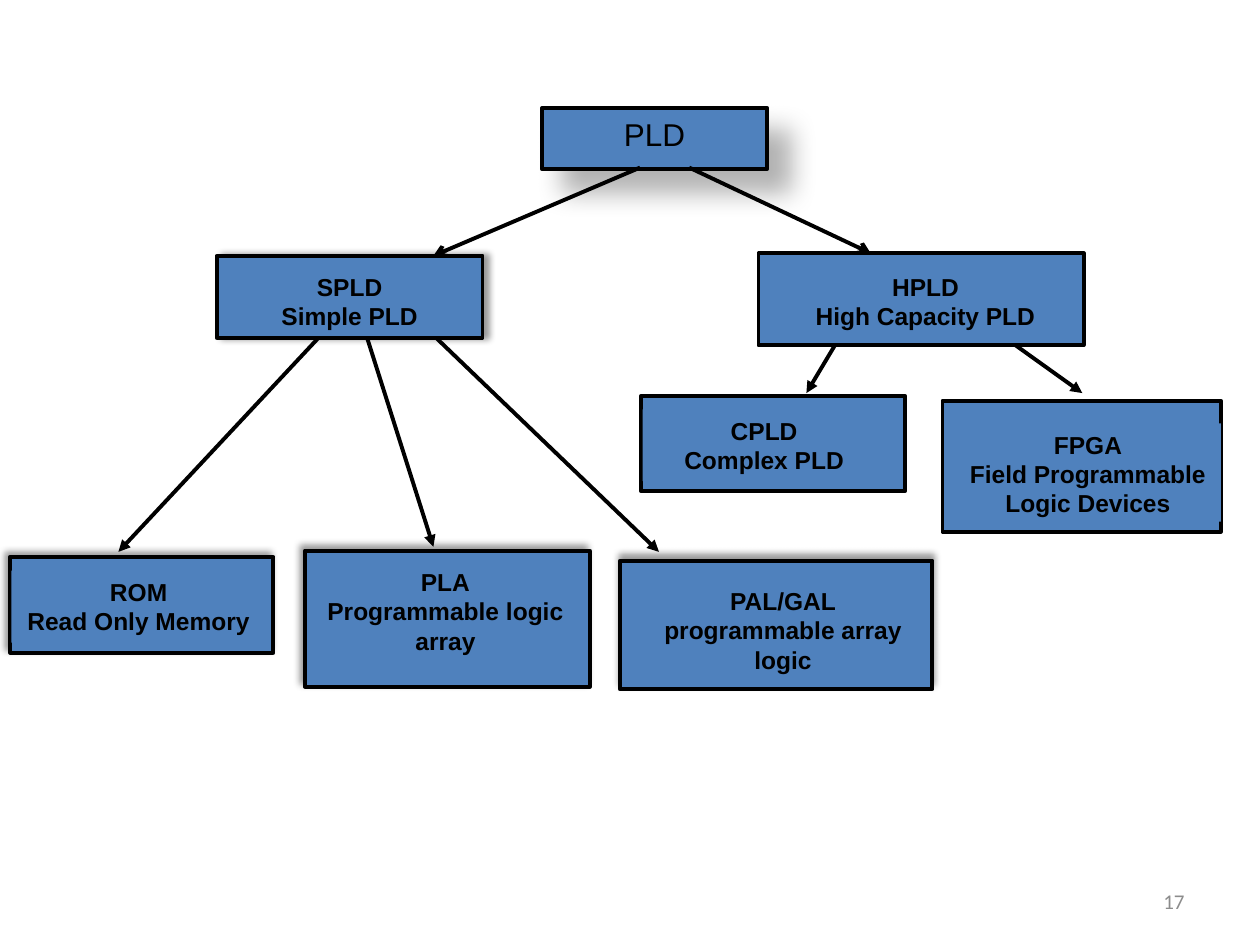
from lxml.etree import SubElement
from pptx import Presentation
from pptx.dml.color import RGBColor
from pptx.enum.shapes import MSO_CONNECTOR, MSO_SHAPE
from pptx.enum.text import MSO_ANCHOR, PP_ALIGN
from pptx.oxml.ns import qn
from pptx.util import Inches, Pt

BLUE = RGBColor(0x4F, 0x81, 0xBD)
BLACK = RGBColor(0, 0, 0)
GREY = RGBColor(0x8C, 0x8C, 0x8C)

deck = Presentation()
deck.slide_width, deck.slide_height = Inches(10), Inches(7.5)
slide = deck.slides.add_slide(deck.slide_layouts[6])
shapes = slide.shapes
col, row = deck.slide_width / 100, deck.slide_height / 75

HEAD = {"size": Pt(18), "name": "Arial", "bold": False}
LABEL = {"size": Pt(14), "name": "Arial", "bold": True}
NUMBER = {"size": Pt(12), "name": "Calibri", "bold": False}


def place(x, y, wide, high):
    return int(x * col), int(y * row), int(wide * col), int(high * row)


def write(shape, lines, style, align, anchor, color):
    frame = shape.text_frame
    for key, value in {"word_wrap": True, "vertical_anchor": anchor}.items():
        setattr(frame, key, value)
    frame.text = "\n".join(lines)
    for para in frame.paragraphs:
        para.alignment = align
        for key, value in style.items():
            setattr(para.font, key, value)
        para.font.color.rgb = color


boxes = [
    ((43, 8.6, 17.9, 4.8), None, ["PLD"], (30, 15, 18, 45)),
    ((60.2, 20.1, 25.8, 7.3), (62.5, 21.1, 21.9, 4.7), ["HPLD", "High Capacity PLD"], None),
    ((74.8, 31.8, 22.1, 10.4), (75.8, 33.6, 21.1, 7.8),
     ["FPGA", "Field Programmable Logic Devices"], None),
    ((50.9, 31.4, 20.9, 7.6), (51, 32.5, 19.3, 5.7), ["CPLD", "Complex PLD"], None),
    ((0.8, 44.2, 20.9, 7.6), (0.9, 45.3, 20.2, 5.7), ["ROM", "Read Only Memory"], (40, 4, 3, 225)),
    ((49.2, 44.5, 24.8, 10.2), (50.8, 46, 22.7, 7),
     ["PAL/GAL", "programmable array logic"], (40, 4, 3, 270)),
    ((24.2, 43.7, 22.6, 10.8), (24.4, 44.5, 21.9, 9.2),
     ["PLA", "Programmable logic array"], (40, 4, 3, 225)),
    ((17.2, 20.3, 21.1, 6.5), (18.8, 21.1, 17.9, 5.2), ["SPLD", "Simple PLD"], (40, 4, 3, 0)),
]
for outer, inner, lines, shade in boxes:
    for spot in filter(None, (outer, inner)):
        rect = shapes.add_shape(MSO_SHAPE.RECTANGLE, *place(*spot))
        rect.shadow.inherit = False
        rect.fill.solid()
        rect.fill.fore_color.rgb = BLUE
        if spot is inner:
            rect.line.fill.background()
            continue
        rect.line.color.rgb = BLACK
        rect.line.width = Pt(2.25)
        if shade:
            alpha, blur, dist, angle = shade
            glow = SubElement(rect.element.spPr.find(qn("a:effectLst")), qn("a:outerShdw"),
                              blurRad=str(Pt(blur)), dist=str(Pt(dist)),
                              dir=str(angle * 60000), algn="ctr", rotWithShape="0")
            tint = SubElement(glow, qn("a:srgbClr"), val=str(BLACK))
            SubElement(tint, qn("a:alpha"), val=str(alpha * 1000))
    write(rect, lines, LABEL if inner else HEAD, PP_ALIGN.CENTER, MSO_ANCHOR.TOP, BLACK)

links = [
    (67.7, 25, 64, 31.2, "triangle"),
    (77.1, 24.9, 85.9, 31.2, "triangle"),
    (25.2, 26.9, 9.4, 43.8, "triangle"),
    (34.6, 26.8, 52.3, 43.8, "triangle"),
    (29.1, 26.7, 34.4, 43.4, "triangle"),
    (50.8, 13.3, 34.4, 20.3, "arrow"),
    (54.7, 13.3, 69.1, 20.1, "arrow"),
]
base = shapes[0].element
for *ends, tip in links:
    link = shapes.add_connector(MSO_CONNECTOR.STRAIGHT, *place(*ends))
    link.line.color.rgb = BLACK
    link.line.width = Pt(2.25)
    SubElement(link.line._get_or_add_ln(), qn("a:tailEnd"), type=tip)
    SubElement(link.element.spPr, qn("a:effectLst"))
    if tip == "triangle":
        base.addnext(link.element)

page = shapes.add_textbox(*place(71.7, 69.5, 23.3, 4))
write(page, ["17"], NUMBER, PP_ALIGN.RIGHT, MSO_ANCHOR.MIDDLE, GREY)

deck.save("out.pptx")
